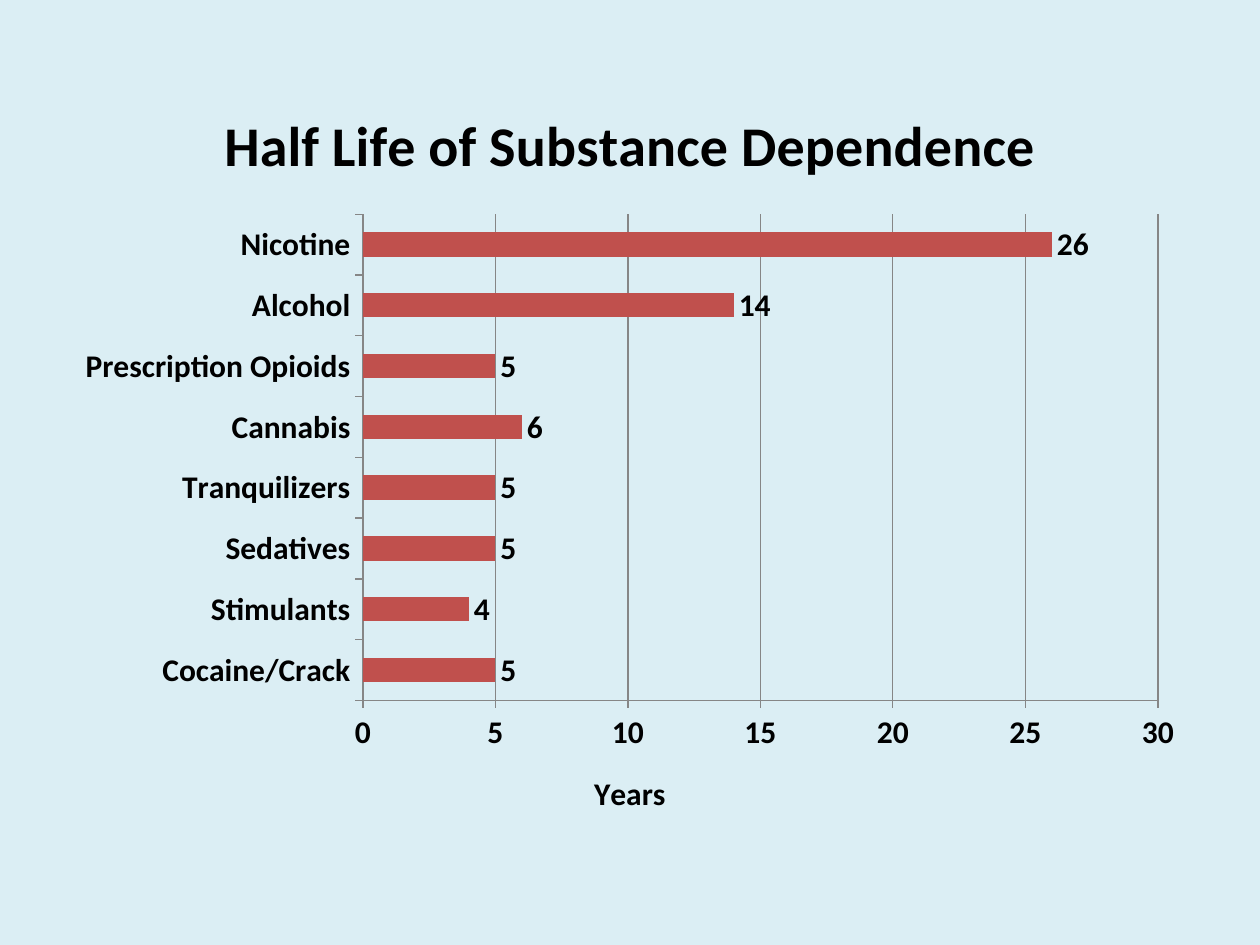
from lxml import etree
from pptx import Presentation
from pptx.chart.data import CategoryChartData
from pptx.dml.color import RGBColor
from pptx.enum.chart import XL_CHART_TYPE, XL_LABEL_POSITION, XL_TICK_MARK
from pptx.oxml.ns import qn
from pptx.util import Inches, Pt

BAR_CLUSTERED = XL_CHART_TYPE.BAR_CLUSTERED
OUTSIDE_END = XL_LABEL_POSITION.OUTSIDE_END
TICK_OUTSIDE, TICK_NONE = XL_TICK_MARK.OUTSIDE, XL_TICK_MARK.NONE

TITLE = "Half Life of Substance Dependence"
AXIS_TITLE = "Years"
HALF_LIVES = [  # bottom to top
    ("Cocaine/Crack", 5),
    ("Stimulants", 4),
    ("Sedatives", 5),
    ("Tranquilizers", 5),
    ("Cannabis", 6),
    ("Prescription Opioids", 5),
    ("Alcohol", 14),
    ("Nicotine", 26),
]
THEME = {
    "font": "Calibri",
    "background": RGBColor.from_string("DBEEF4"),
    "text": RGBColor.from_string("000000"),
    "bar": RGBColor.from_string("C0504D"),
    "line": RGBColor.from_string("868686"),
    "title_size": Pt(32),
    "body_size": Pt(18),
    "line_width": Pt(0.75),
}
CHART_LEFT, CHART_TOP, CHART_WIDTH, CHART_HEIGHT = 0.5, 0.58, 9, 6.12
# Inches from the top left corner of the chart
TITLE_PLACE = {"x": 1.2, "y": 0.18}
AXIS_TITLE_PLACE = {"x": 4.17, "y": 5.5}
PLOT_PLACE = {"x": 2.38, "y": 1.12, "w": 6.31, "h": 3.86}


def style_font(font, size):
    font.name = THEME["font"]
    font.size = size
    font.bold = True
    font.color.rgb = THEME["text"]


def style_line(line):
    line.color.rgb = THEME["line"]
    line.width = THEME["line_width"]


def place(element, lengths, inner=False):
    """Give a chart part a manual layout, which is stored as fractions."""
    layout = element.find(qn("c:layout"))
    if layout is None:
        layout = etree.Element(qn("c:layout"))
        text = element.find(qn("c:tx"))
        element.insert(0 if text is None else element.index(text) + 1, layout)
    for child in list(layout):
        layout.remove(child)
    manual = etree.SubElement(layout, qn("c:manualLayout"))
    settings = [("layoutTarget", "inner")] if inner else []
    settings += [("xMode", "edge"), ("yMode", "edge")]
    for tag, length in lengths.items():
        whole = CHART_WIDTH if tag in ("x", "w") else CHART_HEIGHT
        settings.append((tag, length / whole))
    for tag, value in settings:
        etree.SubElement(manual, qn(f"c:{tag}")).set("val", str(value))


def write_title(title, text, size, lengths):
    run = title.text_frame.paragraphs[0].add_run()
    run.text = text
    style_font(run.font, size)
    place(title._element, lengths)


def style_axis(axis):
    axis.major_tick_mark = TICK_OUTSIDE
    axis.minor_tick_mark = TICK_NONE
    style_line(axis.format.line)
    style_font(axis.tick_labels.font, THEME["body_size"])


def add_half_life_chart(slide):
    chart_data = CategoryChartData()
    chart_data.categories = [name for name, _ in HALF_LIVES]
    chart_data.add_series("Series 1", [years for _, years in HALF_LIVES])
    box = map(Inches, (CHART_LEFT, CHART_TOP, CHART_WIDTH, CHART_HEIGHT))
    chart = slide.shapes.add_chart(BAR_CLUSTERED, *box, chart_data).chart
    style_font(chart.font, THEME["body_size"])
    chart.has_legend = False
    chart.has_title = True
    write_title(chart.chart_title, TITLE, THEME["title_size"], TITLE_PLACE)

    value_axis = chart.value_axis
    for axis in (chart.category_axis, value_axis):
        style_axis(axis)
    value_axis.minimum_scale, value_axis.maximum_scale = 0, 30
    value_axis.major_unit = 5
    value_axis.has_major_gridlines = True
    style_line(value_axis.major_gridlines.format.line)
    value_axis.has_title = True
    write_title(value_axis.axis_title, AXIS_TITLE, THEME["body_size"], AXIS_TITLE_PLACE)

    plot = chart.plots[0]
    plot.gap_width = 150
    plot.vary_by_categories = False
    plot.has_data_labels = True
    labels = plot.data_labels
    labels.show_value = True
    labels.position = OUTSIDE_END
    style_font(labels.font, THEME["body_size"])
    fill = plot.series[0].format.fill
    fill.solid()
    fill.fore_color.rgb = THEME["bar"]
    plot_area = chart._chartSpace.find(".//" + qn("c:plotArea"))
    place(plot_area, PLOT_PLACE, inner=True)


def main():
    presentation = Presentation()
    presentation.slide_width, presentation.slide_height = Inches(10), Inches(7.5)
    slide = presentation.slides.add_slide(presentation.slide_layouts[6])
    background = slide.background.fill
    background.solid()
    background.fore_color.rgb = THEME["background"]
    add_half_life_chart(slide)
    presentation.save("out.pptx")


if __name__ == "__main__":
    main()
